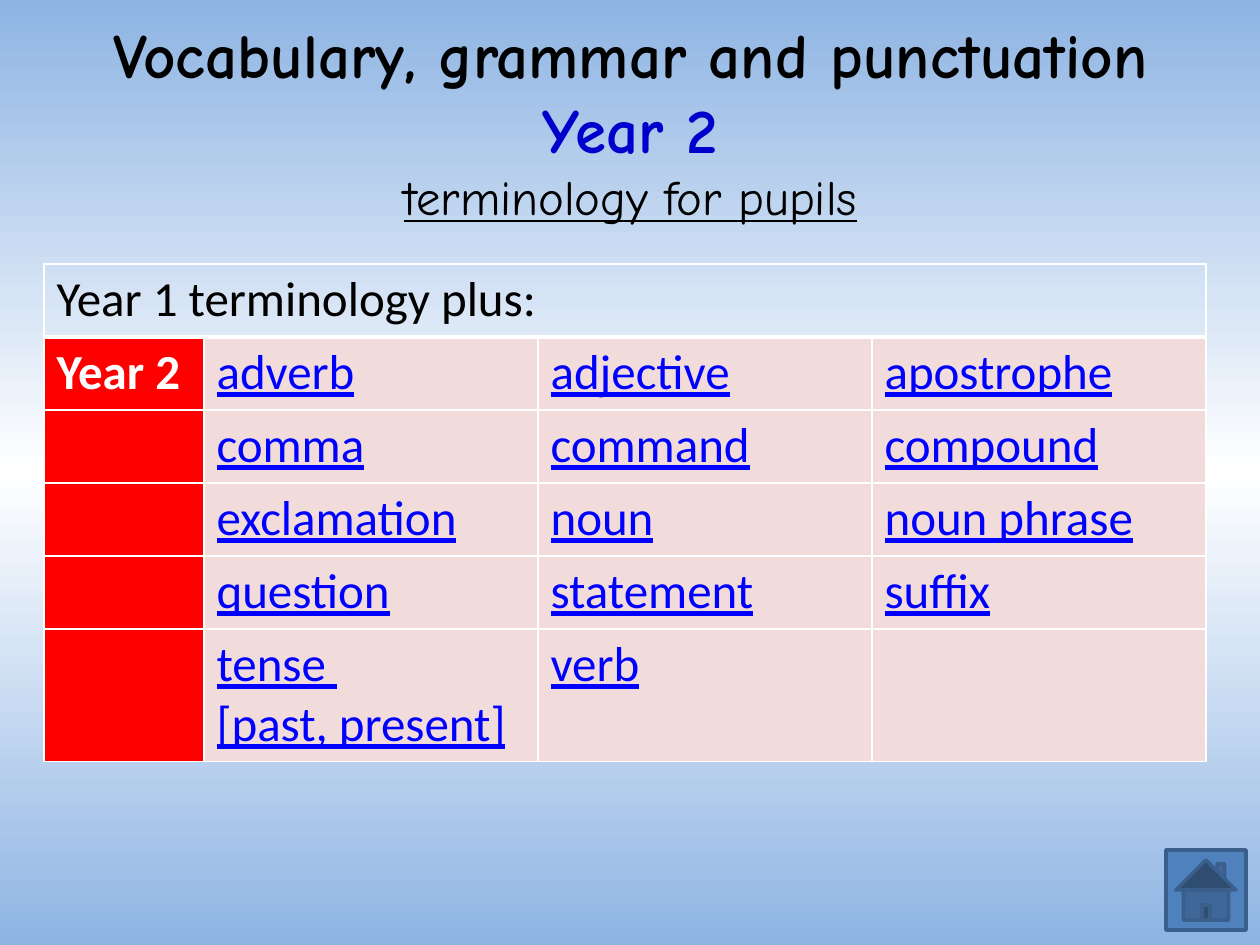
from lxml import etree
from pptx import Presentation
from pptx import util as u
from pptx.dml.color import RGBColor
from pptx.enum import shapes, text
from pptx.oxml.ns import qn

COLORS = {
    "sky": "8EB4E3", "white": "FFFFFF", "black": "000000", "year": "0000CC",
    "term": "0000FF", "label": "FF0000", "cell": "F2DCDB",
    "button": "4F81BD", "button_line": "3A5F8C",
}
TERMS = [
    ["adverb", "adjective", "apostrophe"],
    ["comma", "command", "compound"],
    ["exclamation", "noun", "noun phrase"],
    ["question", "statement", "suffix"],
    ["tense \n[past, present]", "verb", ""],
]
COL_WIDTHS = [160, 334, 334, 334]
ROW_HEIGHTS = [73] * 5 + [130]


def px(n):
    return u.Emu(round(n * 914400 / 126))


def rgb(name):
    return RGBColor.from_string(COLORS[name])


def format_run(r, color, **values):
    r.font.color.rgb = rgb(color)
    for name, value in values.items():
        setattr(r.font, name, value)


def paint_background(s):
    fill = s.background.fill
    fill.gradient()
    fill.gradient_angle = 90
    stops = s.element.find(".//" + qn("a:gsLst"))
    for stop in list(stops):
        stops.remove(stop)
    for pos, color in ((0, "sky"), (50, "white"), (100, "sky")):
        stop = etree.SubElement(stops, qn("a:gs"), pos=str(pos * 1000))
        etree.SubElement(stop, qn("a:srgbClr"), val=COLORS[color])


def place_title(s, x, y, w, h):
    sp = s.shapes.title
    sp.left, sp.top, sp.width, sp.height = map(px, (x, y, w, h))
    tf = sp.text_frame
    tf.word_wrap = True
    tf.auto_size = text.MSO_AUTO_SIZE.NONE
    tf.vertical_anchor = text.MSO_ANCHOR.MIDDLE
    p = tf.paragraphs[0]
    p.alignment = text.PP_ALIGN.CENTER
    heading = {"name": "Comic Neue", "size": u.Pt(36), "bold": True}
    subtitle = {**heading, "size": u.Pt(27.9), "bold": False, "underline": True}
    for words, color, values in (
        ("Vocabulary, grammar and punctuation ", "black", heading),
        ("Year 2", "year", heading),
        ("terminology for pupils", "black", subtitle),
    ):
        if values is subtitle:
            p.add_line_break()
        r = p.add_run()
        r.text = words
        format_run(r, color, **values)


def set_borders(cell, **widths):
    """Draw white cell borders, 1 pt unless a side is given a width."""
    tcPr = cell._tc.get_or_add_tcPr()
    for i, side in enumerate("LRTB"):
        width = u.Pt(widths.get(side, 1))
        ln = etree.Element(qn("a:ln" + side), w=str(width))
        fill = etree.SubElement(ln, qn("a:solidFill"))
        etree.SubElement(fill, qn("a:srgbClr"), val=COLORS["white"])
        tcPr.insert(i, ln)


def fill_cell(cell, words, fill, color, **values):
    if fill:
        cell.fill.solid()
        cell.fill.fore_color.rgb = rgb(fill)
    else:
        cell.fill.background()
    if words:
        cell.text = words
    for p in cell.text_frame.paragraphs:
        for r in p.runs:
            format_run(r, color, name="Calibri", size=u.Pt(28), **values)


def place_terms(s, x, y):
    box = map(px, (x, y, sum(COL_WIDTHS), sum(ROW_HEIGHTS)))
    table = s.shapes.add_table(len(ROW_HEIGHTS), len(COL_WIDTHS), *box).table
    for col, width in zip(table.columns, COL_WIDTHS):
        col.width = px(width)
    for row, height in zip(table.rows, ROW_HEIGHTS):
        row.height = px(height)
    table.cell(0, 0).merge(table.cell(0, len(COL_WIDTHS) - 1))
    fill_cell(table.cell(0, 0), "Year 1 terminology plus:", None, "black", bold=False)
    for i, terms in enumerate(TERMS, 1):
        label = "Year 2" if i == 1 else ""
        fill_cell(table.cell(i, 0), label, "label", "white", bold=True)
        for j, term in enumerate(terms, 1):
            fill_cell(table.cell(i, j), term, "cell", "term", bold=False, underline=True)
    for i, row in enumerate(table.rows):
        widths = {0: {"B": 3}, 1: {"T": 3}}.get(i, {})
        for cell in row.cells:
            set_borders(cell, **widths)


def place_home_button(s, x, y, size):
    sp = s.shapes.add_shape(shapes.MSO_SHAPE.ACTION_BUTTON_HOME,
                            *map(px, (x, y, size, size)))
    sp.shadow.inherit = False
    sp.fill.solid()
    sp.fill.fore_color.rgb = rgb("button")
    sp.line.color.rgb = rgb("button_line")
    sp.line.width = u.Pt(2)


def main():
    prs = Presentation()
    prs.slide_width, prs.slide_height = px(1260), px(945)
    s = prs.slides.add_slide(prs.slide_layouts[5])
    paint_background(s)
    place_home_button(s, 1166, 850, 80)
    place_title(s, 35, 16, 1191, 208)
    place_terms(s, 44, 264)
    prs.save("out.pptx")


if __name__ == "__main__":
    main()
